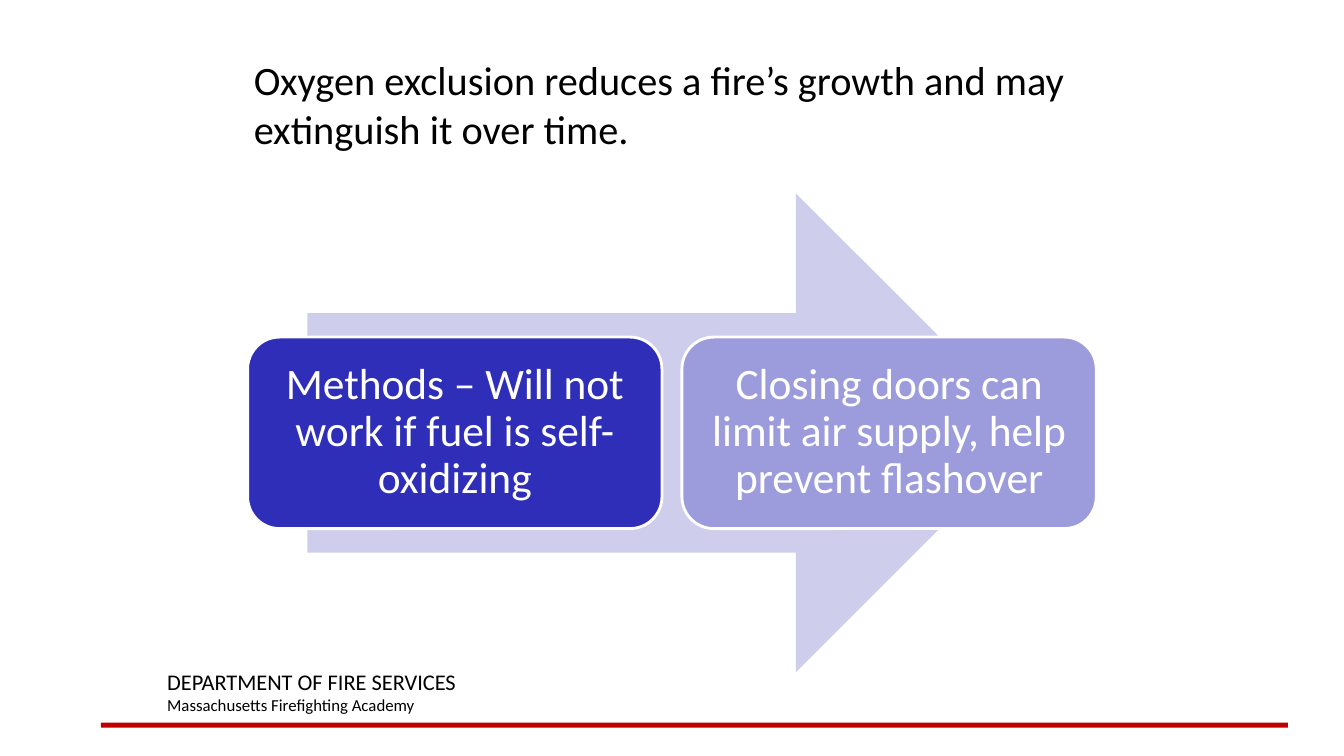
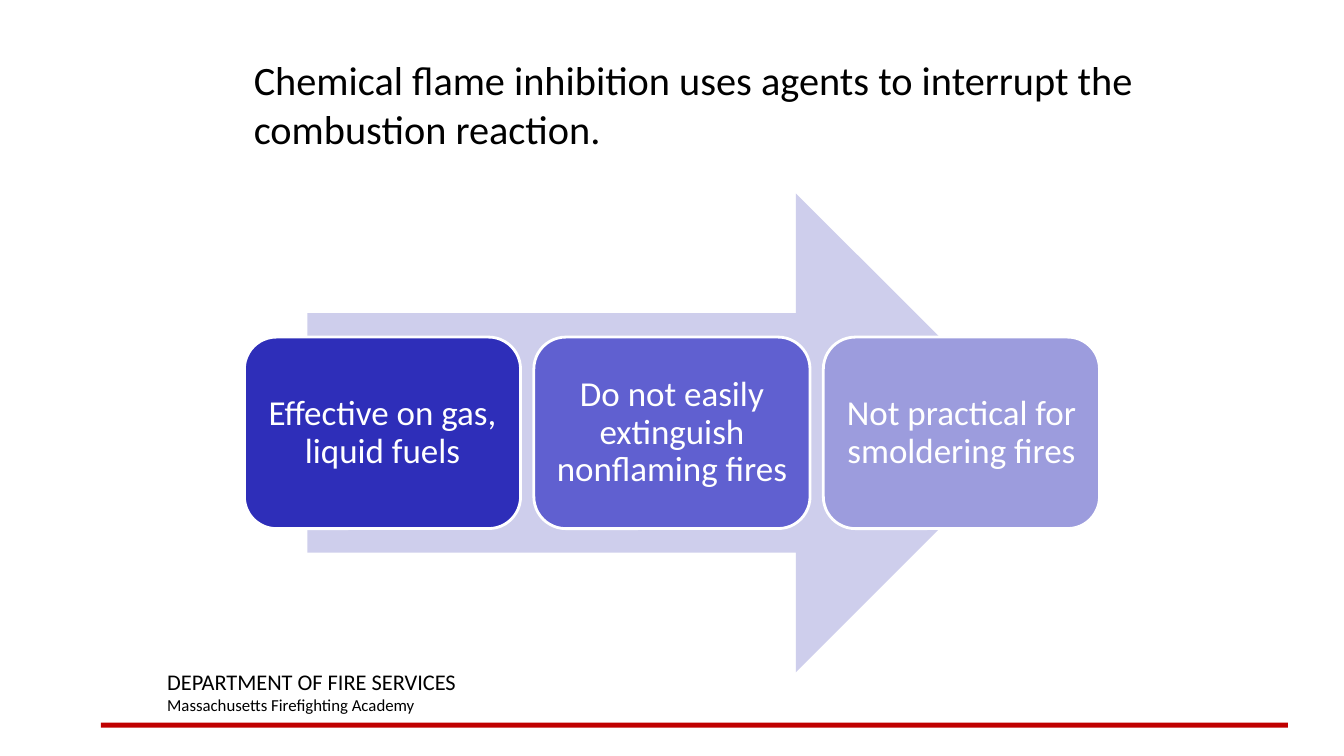
from dataclasses import dataclass

from pptx import Presentation
from pptx.dml.color import RGBColor
from pptx.enum.shapes import MSO_SHAPE
from pptx.enum.text import MSO_ANCHOR, PP_ALIGN
from pptx.util import Pt

RECTANGLE = MSO_SHAPE.RECTANGLE
ROUNDED = MSO_SHAPE.ROUNDED_RECTANGLE
RIGHT_ARROW = MSO_SHAPE.RIGHT_ARROW
TOP, MIDDLE = MSO_ANCHOR.TOP, MSO_ANCHOR.MIDDLE
LEFT, CENTER = PP_ALIGN.LEFT, PP_ALIGN.CENTER


@dataclass(frozen=True)
class Theme:
    font: str = "Calibri"
    text: str = "000000"
    white: str = "FFFFFF"
    rule: str = "C00000"
    arrow: str = "CECEEC"
    dark: str = "2E2EB9"
    medium: str = "6060D0"
    light: str = "9C9CDD"
    title_size: float = 28.8
    department_size: float = 16
    academy_size: float = 12


THEME = Theme()
SLIDE_WIDTH, SLIDE_HEIGHT = 960, 540
ARROW_LEFT, ARROW_TOP, ARROW_WIDTH, ARROW_HEIGHT = 219.6, 138.2, 520, 342
BOX_HEIGHT = 0.4 * ARROW_HEIGHT
BOX_TOP = ARROW_TOP + (ARROW_HEIGHT - BOX_HEIGHT) / 2
GAP_RATIO = 0.048  # gap between boxes, as a share of box width
INSET_RATIO = 0.3  # box margin, as a share of type size

SLIDES = [
    {
        "title": "Oxygen exclusion reduces a fire’s growth and may extinguish it over time.",
        "box_width": 296,
        "size": 31,
        "boxes": [
            ("Methods – Will not work if fuel is self-oxidizing", THEME.dark),
            ("Closing doors can limit air supply, help prevent flashover", THEME.light),
        ],
    },
    {
        "title": "Chemical flame inhibition uses agents to interrupt the combustion reaction.",
        "box_width": 197.3,
        "size": 25,
        "boxes": [
            ("Effective on gas, liquid fuels", THEME.dark),
            ("Do not easily extinguish nonflaming fires", THEME.medium),
            ("Not practical for smoldering fires", THEME.light),
        ],
    },
]


def add_filled_shape(page, kind, left, top, width, height, fill, line=None):
    shape = page.shapes.add_shape(kind, Pt(left), Pt(top), Pt(width), Pt(height))
    shape.shadow.inherit = False
    shape.fill.solid()
    shape.fill.fore_color.rgb = RGBColor.from_string(fill)
    if line:
        shape.line.color.rgb = RGBColor.from_string(line)
        shape.line.width = Pt(2)
    else:
        shape.line.fill.background()
    return shape


def write_text(box, lines, color=THEME.text, align=LEFT, anchor=TOP, spacing=None, inset=None):
    """Fill a box with (text, size) lines, one paragraph each."""
    frame = box.text_frame
    frame.word_wrap = True
    frame.vertical_anchor = anchor
    if inset is not None:
        frame.margin_left = frame.margin_right = Pt(inset)
        frame.margin_top = frame.margin_bottom = Pt(inset)
    for index, (text, size) in enumerate(lines):
        para = frame.add_paragraph() if index else frame.paragraphs[0]
        para.alignment = align
        para.line_spacing = spacing
        span = para.add_run()
        span.text = text
        span.font.name = THEME.font
        span.font.size = Pt(size)
        span.font.color.rgb = RGBColor.from_string(color)


deck = Presentation()
deck.slide_width, deck.slide_height = Pt(SLIDE_WIDTH), Pt(SLIDE_HEIGHT)
blank_layout = deck.slide_layouts[6]

for content in SLIDES:
    page = deck.slides.add_slide(blank_layout)

    add_filled_shape(page, RECTANGLE, 72, 516.2, 848, 3.6, THEME.rule)
    footer = page.shapes.add_textbox(Pt(112.3), Pt(473.8), Pt(408), Pt(41))
    write_text(footer, [
        ("DEPARTMENT OF FIRE SERVICES", THEME.department_size),
        ("Massachusetts Firefighting Academy", THEME.academy_size),
    ])

    title = page.shapes.add_textbox(Pt(174.2), Pt(36), Pt(663), Pt(72))
    write_text(title, [(content["title"], THEME.title_size)])

    add_filled_shape(page, RIGHT_ARROW, ARROW_LEFT, ARROW_TOP, ARROW_WIDTH, ARROW_HEIGHT, THEME.arrow)

    box_width, size = content["box_width"], content["size"]
    gap = GAP_RATIO * box_width
    count = len(content["boxes"])
    row_width = count * box_width + (count - 1) * gap
    row_left = (SLIDE_WIDTH - row_width) / 2
    for index, (text, fill) in enumerate(content["boxes"]):
        box = add_filled_shape(page, ROUNDED, row_left + index * (box_width + gap), BOX_TOP,
                               box_width, BOX_HEIGHT, fill, line=THEME.white)
        write_text(box, [(text, size)], color=THEME.white, align=CENTER, anchor=MIDDLE,
                   spacing=0.9, inset=INSET_RATIO * size)

deck.save("out.pptx")
